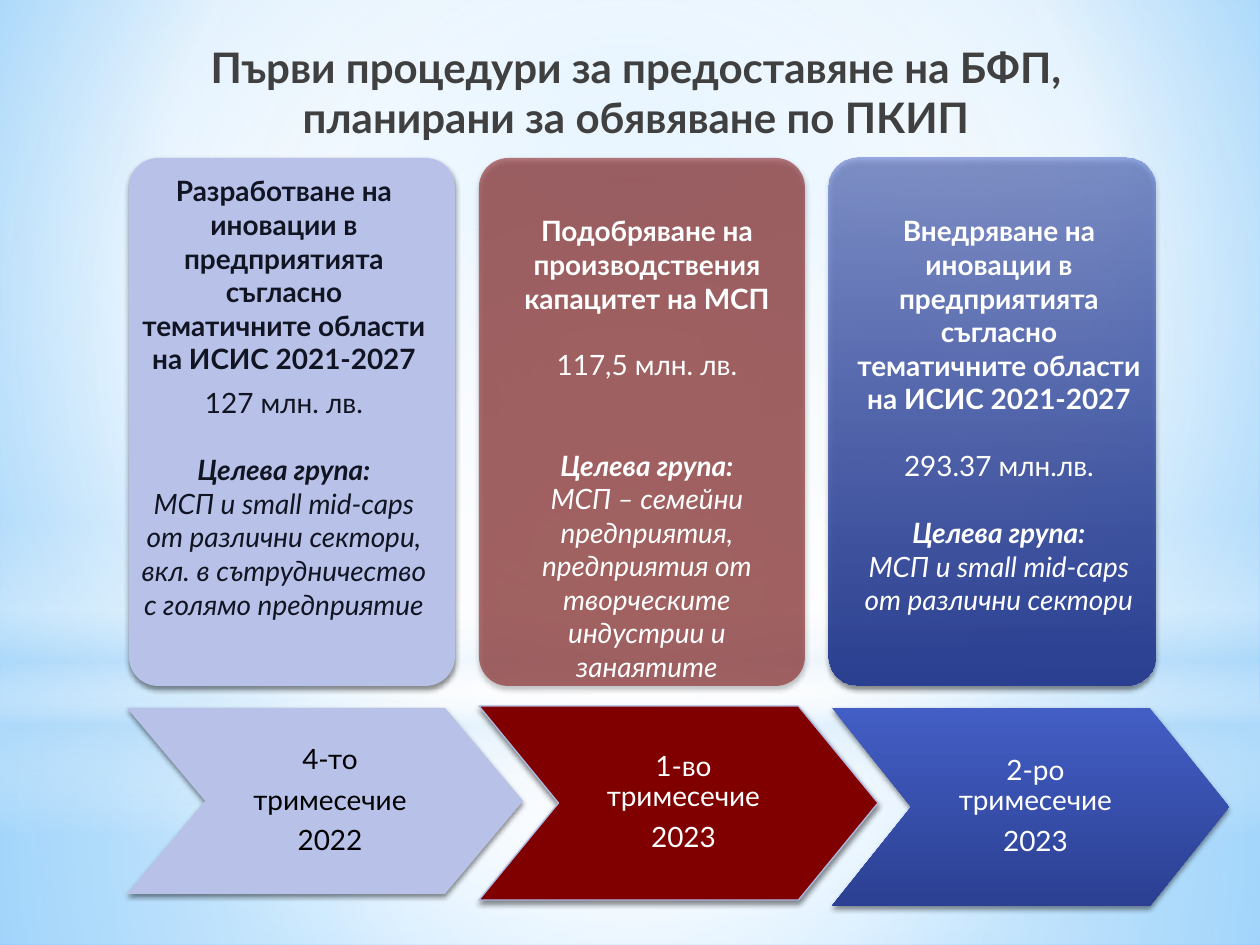
from lxml.etree import SubElement
from pptx import Presentation
from pptx.dml.color import RGBColor
from pptx.enum.shapes import MSO_SHAPE as Shape
from pptx.enum.text import MSO_ANCHOR as Anchor, MSO_AUTO_SIZE as AutoSize, PP_ALIGN as Align
from pptx.oxml.ns import qn
from pptx.util import Emu, Pt

COLORS = {
    "white": "FFFFFF", "black": "000000", "ink": "111422", "title": "404040",
    "sky": "B4DCFA", "azure": "9ED5FF", "edge": "5BB9FF",
    "lilac": "B8C2E9", "maroon": "800000", "outline": "AFBBE6",
    "blue": "435EC5", "navy": "2B4092",
}
FONT = "Lato"
CENTER = (50, 50, 50, 50)
LINE_GAP = 19

LAYERS = [
    (Shape.RECTANGLE, (0, 703, 1260, 242),
     [(0, "white", 91), (37, "white", 76), (100, "sky", 79)], CENTER),
    (Shape.RECTANGLE, (0, 0, 1260, 703),
     [(0, "white", 89), (48, "white", 62), (100, "sky", 79)], CENTER),
    (Shape.RECTANGLE, (0, 519, 1260, 315),
     [(0, "white", 0), (29, "white", 30), (45, "sky", 40),
      (55, "white", 26), (65, "sky", 60), (100, "white", 0)], None),
    (Shape.OVAL, (0, 220, 1260, 703), [(0, "white", 100), (56, "white", 0)], CENTER),
]

THEMATIC = "иновации в предприятията съгласно тематичните области на ИСИС 2021-2027"
TARGET = "Целева група:"
COLUMNS = [
    {
        "card": [(0, "lilac", 100)], "ink": "ink", "text_box": (127, 168, 314, 532), "inset": 6,
        "heading": f"Разработване на {THEMATIC}", "amount": "127 млн. лв.", "gaps": (6, LINE_GAP),
        "group": "МСП и small mid-caps от различни сектори, вкл. в сътрудничество с голямо предприятие",
        "arrow": [(0, "lilac", 100)], "arrow_box": (127, 708, 396, 186), "arrow_ink": "black",
        "outline": None, "period": ["4-то", "тримесечие", "2022"],
    },
    {
        "card": [(0, "maroon", 50)], "ink": "white", "text_box": (490, 170, 314, 564), "inset": 44,
        "heading": "Подобряване на производствения капацитет на МСП",
        "amount": "117,5 млн. лв.", "gaps": (LINE_GAP, 2 * LINE_GAP),
        "group": "МСП – семейни предприятия, предприятия от творческите индустрии и занаятите",
        "arrow": [(0, "maroon", 100)], "arrow_box": (479, 706, 399, 194), "arrow_ink": "white",
        "outline": "outline", "period": ["1-во тримесечие", "2023"],
    },
    {
        "card": [(0, "blue", 50), (100, "navy", 100)], "ink": "white",
        "text_box": (842, 170, 314, 564), "inset": 44,
        "heading": f"Внедряване на {THEMATIC}", "amount": "293.37 млн.лв.",
        "gaps": (LINE_GAP, LINE_GAP), "group": "МСП и small mid-caps от различни сектори",
        "arrow": [(0, "blue", 100), (100, "navy", 100)], "arrow_box": (832, 708, 397, 198),
        "arrow_ink": "white", "outline": None, "period": ["2-ро тримесечие", "2023"],
    },
]


def px(length):
    """Turn whole pixels, 126 to the inch, into EMU."""
    return Emu(round(length * 914400 / 126))


def rgb(name):
    """Look up a named colour."""
    return RGBColor.from_string(COLORS[name])


def add_color(parent, name, alpha):
    """Append a colour with its opacity in percent."""
    color = SubElement(parent, qn("a:srgbClr"), val=COLORS[name])
    if alpha < 100:
        SubElement(color, qn("a:alpha"), val=str(alpha * 1000))


def paint(fill, holder, stops, focus=None):
    """Fill with one colour, a downward gradient, or a circular one around a focus."""
    fill.solid()
    solid = holder.find(qn("a:solidFill"))
    if len(stops) == 1:
        add_color(solid, *stops[0][1:])
        return
    gradient = solid.makeelement(qn("a:gradFill"), {"rotWithShape": "1"})
    holder.replace(solid, gradient)
    stop_list = SubElement(gradient, qn("a:gsLst"))
    for position, name, alpha in stops:
        add_color(SubElement(stop_list, qn("a:gs"), pos=str(position * 1000)), name, alpha)
    if focus:
        circle = SubElement(gradient, qn("a:path"), {"path": "circle"})
        sides = {side: str(value * 1000) for side, value in zip("ltrb", focus)}
        SubElement(circle, qn("a:fillToRect"), sides)
    else:
        SubElement(gradient, qn("a:lin"), ang="5400000", scaled="0")


def add_block(page, kind, box, stops, focus=None):
    """Add a preset shape with a fill, no line and no shadow."""
    shape = page.shapes.add_shape(kind, *map(px, box))
    shape.shadow.inherit = False
    shape.line.fill.background()
    paint(shape.fill, shape.element.spPr, stops, focus)
    return shape


def drop_shadow(shape):
    """Give a shape a soft shadow just below it."""
    effects = shape.element.spPr.find(qn("a:effectLst"))
    shadow = SubElement(effects, qn("a:outerShdw"), blurRad=str(Pt(3.1)), dist=str(Pt(1.8)),
                        dir="5400000", rotWithShape="0")
    add_color(shadow, "black", 45)


def set_margins(frame, left, top, right, bottom):
    """Wrap the text and set its four insets."""
    frame.word_wrap = True
    frame.auto_size = AutoSize.NONE
    frame.margin_left, frame.margin_top = px(left), px(top)
    frame.margin_right, frame.margin_bottom = px(right), px(bottom)


def add_line(frame, text, ink, size=16, bold=False, italic=False, before=0):
    """Add a centred paragraph of one run, reusing the first empty paragraph."""
    para = frame.paragraphs[0] if not frame.text else frame.add_paragraph()
    para.alignment = Align.CENTER
    para.space_before = Pt(before)
    span = para.add_run()
    span.text = text
    font = span.font
    font.name, font.size, font.bold, font.italic = FONT, Pt(size), bold, italic
    font.color.rgb = rgb(ink)
    return para


def add_title(page):
    """Place the title in front of the background layers."""
    title = page.shapes.title
    page.shapes.element.append(title.element)
    title.left, title.top, title.width, title.height = map(px, (127, 35, 1018, 88))
    frame = title.text_frame
    set_margins(frame, 13, 6, 13, 6)
    frame.vertical_anchor = Anchor.TOP
    add_line(frame, "Първи процедури за предоставяне на БФП, планирани за обявяване по ПКИП",
             "title", size=24, bold=True)


def add_card(page, index, column):
    """Add the rounded panel of one procedure."""
    card = add_block(page, Shape.ROUNDED_RECTANGLE, (129 + 350 * index, 158, 326, 528),
                     column["card"])
    card.adjustments[0] = 0.09
    drop_shadow(card)


def add_arrow(page, column):
    """Add the chevron with the planned quarter."""
    arrow = add_block(page, Shape.CHEVRON, column["arrow_box"], column["arrow"])
    arrow.adjustments[0] = round(79 / column["arrow_box"][3], 2)
    drop_shadow(arrow)
    if column["outline"]:
        arrow.line.color.rgb = rgb(column["outline"])
        arrow.line.width = Pt(0.75)
    frame = arrow.text_frame
    set_margins(frame, 20, 5, 10, 5)
    frame.vertical_anchor = Anchor.MIDDLE
    for text in column["period"]:
        para = add_line(frame, text, column["arrow_ink"])
        para.line_spacing = 0.9
        para.space_after = Pt(6)


def add_details(page, column):
    """Add the name, budget and target group of one procedure."""
    frame = page.shapes.add_textbox(*map(px, column["text_box"])).text_frame
    set_margins(frame, 13, column["inset"], 13, 6)
    ink = column["ink"]
    amount_gap, target_gap = column["gaps"]
    add_line(frame, column["heading"], ink, bold=True)
    add_line(frame, column["amount"], ink, before=amount_gap)
    add_line(frame, TARGET, ink, bold=True, italic=True, before=target_gap)
    add_line(frame, column["group"], ink, italic=True)


def main():
    """Build the slide and save it."""
    deck = Presentation()
    deck.slide_width, deck.slide_height = px(1260), px(945)
    page = deck.slides.add_slide(deck.slide_layouts[5])
    backdrop = page.background.fill
    backdrop.solid()
    paint(backdrop, page.element.find(".//" + qn("p:bgPr")),
          [(0, "azure", 100), (60, "white", 100), (100, "edge", 100)], (20, 10, 20, 60))
    for kind, box, stops, focus in LAYERS:
        add_block(page, kind, box, stops, focus)
    add_title(page)
    for index, column in enumerate(COLUMNS):
        add_card(page, index, column)
        add_arrow(page, column)
        add_details(page, column)
    deck.save("out.pptx")


if __name__ == "__main__":
    main()
